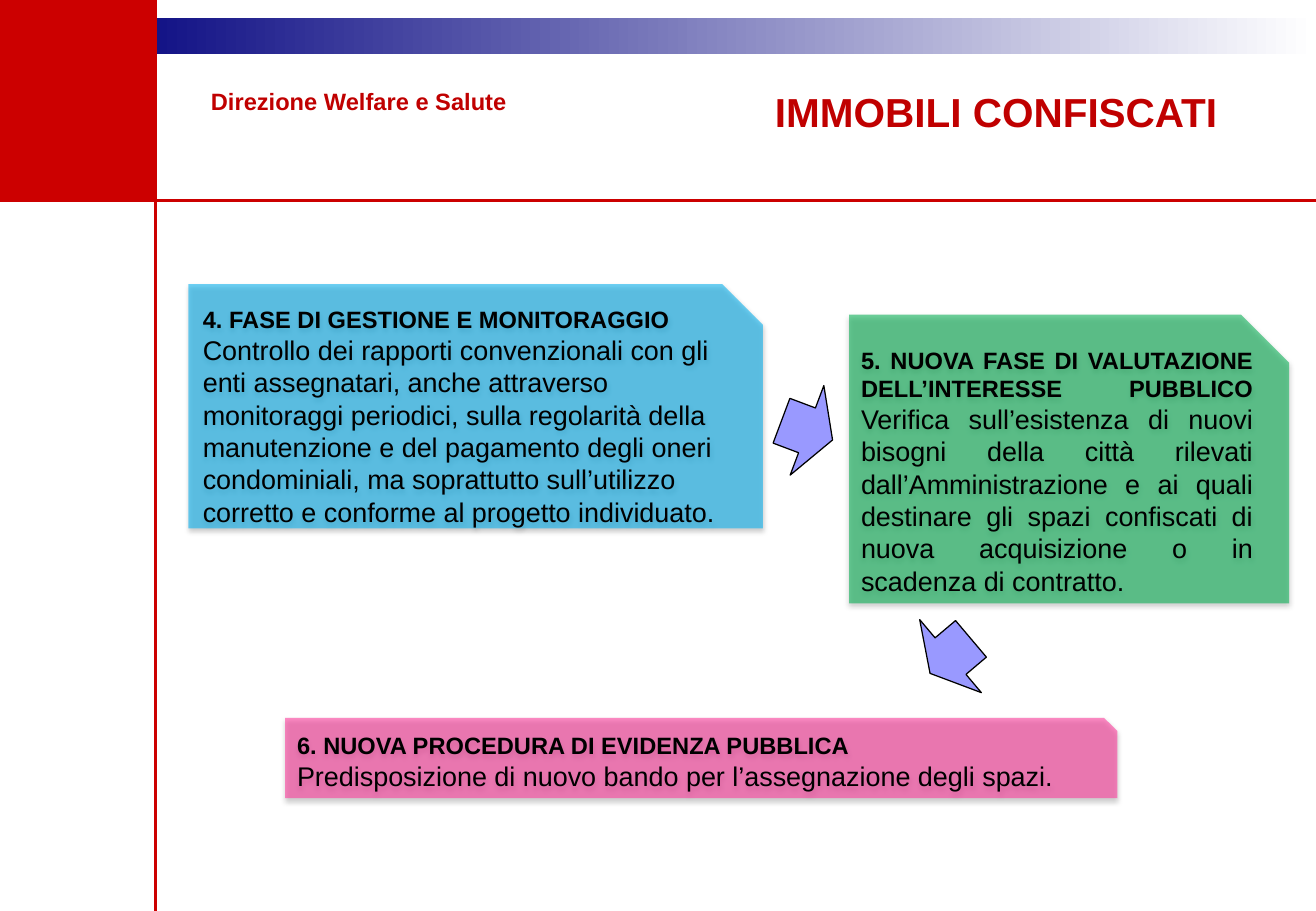
import pptx
import pptx.util
import pptx.dml.color
import pptx.oxml.ns
import pptx.enum.shapes
import pptx.enum.text
from dataclasses import dataclass
from lxml import etree
from pptx.util import Cm

FORM = pptx.enum.shapes.MSO_SHAPE
ALIGN = pptx.enum.text.PP_ALIGN
LEFT, JUST = ALIGN.LEFT, ALIGN.JUSTIFY


@dataclass(frozen=True)
class Theme:
    red: str = "CC0000"
    title: str = "C00000"
    navy: str = "00007D"
    white: str = "FFFFFF"
    black: str = "000000"
    blue: str = "00B0F0"
    green: str = "00B050"
    pink: str = "FF3399"
    lilac: str = "9999FF"
    font: str = "Arial"
    big: int = 24
    body: int = 16
    head: int = 14


THEME = Theme()


def rgb(code):
    return pptx.dml.color.RGBColor.from_string(code)


def add_tag(node, name, **attrs):
    tag = etree.SubElement(node, pptx.oxml.ns.qn(name))
    for key, value in attrs.items():
        tag.set(key, str(value))
    return tag


def add_form(slide, form, place, color):
    shape = slide.shapes.add_shape(form, *map(Cm, place))
    shape.shadow.inherit = False
    shape.fill.solid()
    shape.fill.fore_color.rgb = rgb(color)
    shape.line.fill.background()
    return shape


def write(shape, paras, align=LEFT, color=THEME.black,
          inset=(0.25, 0.13, 0.25, 0.13)):
    """Fill a shape with paragraphs, each a list of (text, size, bold) runs."""
    frame = shape.text_frame
    frame.word_wrap = True
    frame.vertical_anchor = pptx.enum.text.MSO_ANCHOR.MIDDLE
    (frame.margin_left, frame.margin_top,
     frame.margin_right, frame.margin_bottom) = map(Cm, inset)
    for i, runs in enumerate(paras):
        para = frame.add_paragraph() if i else frame.paragraphs[0]
        para.alignment = align
        for text, size, bold in runs:
            run = para.add_run()
            run.text = text
            run.font.size = pptx.util.Pt(size)
            run.font.bold = bold
            run.font.name = THEME.font
            run.font.color.rgb = rgb(color)


def add_title(slide, place, text, size):
    box = slide.shapes.add_textbox(*map(Cm, place))
    write(box, [[(text, size, True)]], align=JUST, color=THEME.title)


def add_bar(slide, place):
    bar = add_form(slide, FORM.RECTANGLE, place, THEME.navy)
    bar.fill.gradient()
    bar.fill.gradient_angle = 0
    for stop, color in zip(bar.fill.gradient_stops, (THEME.navy, THEME.white)):
        stop.color.rgb = rgb(color)


def add_rule(slide, *ends):
    rule = slide.shapes.add_connector(
        pptx.enum.shapes.MSO_CONNECTOR.STRAIGHT, *map(Cm, ends))
    rule.line.color.rgb = rgb(THEME.red)
    rule.line.width = pptx.util.Pt(1.5)
    add_tag(rule._element.spPr, "a:effectLst")


def add_phase(slide, place, color, paras, **form):
    """Add a see-through card with a cut corner and a soft shadow."""
    card = add_form(slide, FORM.SNIP_1_RECTANGLE, place, color)
    props = card._element.spPr
    tint = props.find(".//" + pptx.oxml.ns.qn("a:srgbClr"))
    add_tag(tint, "a:alpha", val=56000)
    glow = add_tag(props.find(pptx.oxml.ns.qn("a:effectLst")), "a:outerShdw",
                   blurRad=40000, dist=23000, dir=5400000, rotWithShape=0)
    shade = add_tag(glow, "a:srgbClr", val=THEME.black)
    add_tag(shade, "a:alpha", val=35000)
    write(card, paras, **form)


def add_arrow(slide, place, turn):
    arrow = add_form(slide, FORM.UP_ARROW, place, THEME.lilac)
    arrow.line.color.rgb = rgb(THEME.black)
    arrow.line.width = pptx.util.Pt(0.75)
    arrow.rotation = turn


def add_frame(slide):
    add_bar(slide, (1.24, 0.38, 26.26, 0.76))
    add_form(slide, FORM.RECTANGLE, (0, 0, 3.25, 4.19), THEME.red)
    add_rule(slide, 0, 4.19, 27.51, 4.19)
    add_rule(slide, 3.25, 19.05, 3.25, 0)


def main():
    deck = pptx.Presentation()
    deck.slide_width, deck.slide_height = Cm(27.51), Cm(19.05)
    slide = deck.slides.add_slide(deck.slide_layouts[6])
    add_frame(slide)

    add_phase(slide, (3.94, 5.94, 12.01, 5.11), THEME.blue, [
        [("4. FASE DI GESTIONE E MONITORAGGIO", THEME.head, True)],
        [("Controllo dei rapporti convenzionali con gli enti assegnatari, "
          "anche attraverso monitoraggi periodici, sulla regolarità della "
          "manutenzione e del pagamento degli oneri condominiali, ma "
          "soprattutto sull’utilizzo corretto e conforme al progetto "
          "individuato.", THEME.body, False)],
    ], inset=(0.3, 0, 0.1, 0))
    add_phase(slide, (17.75, 6.58, 9.2, 6.04), THEME.green, [
        [("5. NUOVA FASE DI VALUTAZIONE DELL’INTERESSE PUBBLICO ",
          THEME.head, True),
         ("Verifica sull’esistenza di nuovi bisogni della città rilevati "
          "dall’Amministrazione e ai quali destinare gli spazi confiscati "
          "di nuova acquisizione o in scadenza di contratto.",
          THEME.body, False)],
    ], align=JUST)
    add_phase(slide, (5.96, 15.01, 17.4, 1.68), THEME.pink, [
        [("6. NUOVA PROCEDURA DI EVIDENZA PUBBLICA", THEME.head, True)],
        [("Predisposizione di nuovo bando per l’assegnazione degli spazi.",
          THEME.body, False)],
    ], align=JUST)

    add_title(slide, (15.95, 1.68, 9.8, 1.3), "IMMOBILI CONFISCATI", THEME.big)
    add_arrow(slide, (15.87, 8.43, 2, 1.14), 110.6)
    add_arrow(slide, (18.87, 13.16, 2, 1.12), 229.8)
    add_title(slide, (4.16, 1.68, 7.37, 0.86), "Direzione Welfare e Salute",
              THEME.head)
    deck.save("out.pptx")


if __name__ == "__main__":
    main()
